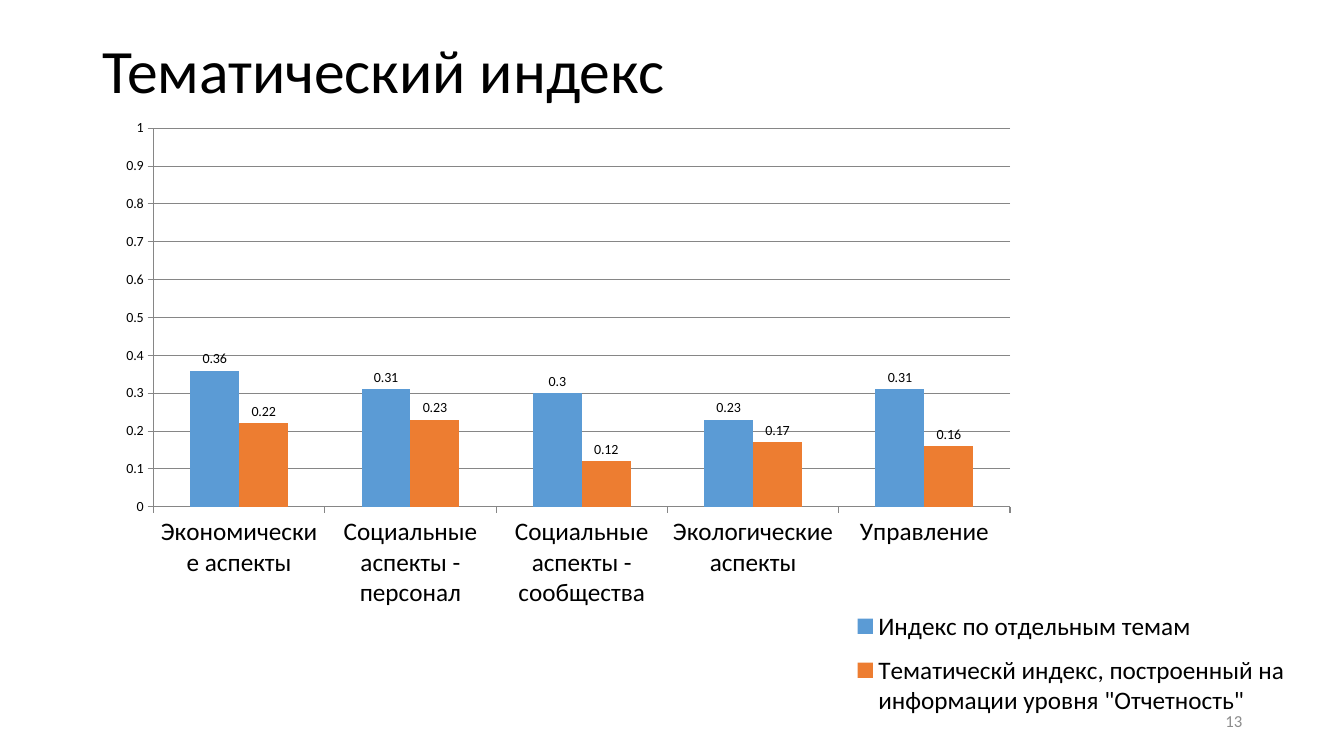
from lxml.etree import SubElement, QName
from pptx import Presentation
from pptx.chart.data import CategoryChartData
from pptx.dml.color import RGBColor
from pptx.enum.chart import XL_CHART_TYPE, XL_LABEL_POSITION, XL_LEGEND_POSITION, XL_TICK_MARK
from pptx.enum.text import MSO_ANCHOR, PP_ALIGN
from pptx.oxml import parse_xml
from pptx.oxml.ns import nsdecls, qn
from pptx.util import Inches, Pt

FONT = "Calibri"
BLACK = RGBColor(0x00, 0x00, 0x00)
GRAY = RGBColor(0x8C, 0x8C, 0x8C)
GRID = RGBColor(0x86, 0x86, 0x86)
BLUE = RGBColor(0x5B, 0x9B, 0xD5)
ORANGE = RGBColor(0xED, 0x7D, 0x31)

TOPICS = [
    "Экономические аспекты",
    "Социальные аспекты - персонал",
    "Социальные аспекты - сообщества",
    "Экологические аспекты",
    "Управление",
]
INDEXES = [
    ("Индекс по отдельным темам", BLUE, (0.36, 0.31, 0.3, 0.23, 0.31)),
    ('Тематическй индекс, построенный на информации уровня "Отчетность"',
     ORANGE, (0.22, 0.23, 0.12, 0.17, 0.16)),
]
PLOT_SHARES = (0.06, 0.026, 0.705, 0.602)
LEGEND_SHARES = (0.636, 0.772, 0.362, 0.21)


def add_text(s, box, text, size, color, align, spacing=1.0):
    tf = s.shapes.add_textbox(*map(Inches, box)).text_frame
    tf.word_wrap = True
    tf.vertical_anchor = MSO_ANCHOR.MIDDLE
    tf.text = text
    p = tf.paragraphs[0]
    p.alignment = align
    p.line_spacing = spacing
    style_font(p.runs[0].font, size, color)


def style_font(font, size, color=BLACK):
    font.name = FONT
    font.size = Pt(size)
    font.color.rgb = color


def make_layout(shares, inner=False):
    layout = parse_xml(f"<c:layout {nsdecls('c')}><c:manualLayout/></c:layout>")
    manual = layout[0]
    settings = [("layoutTarget", "inner")] if inner else []
    settings += [("xMode", "edge"), ("yMode", "edge")]
    settings += zip("xywh", shares)
    for tag, value in settings:
        SubElement(manual, QName(qn(f"c:{tag}"))).set("val", str(value))
    return layout


def clear_layout(element):
    for layout in element.findall(qn("c:layout")):
        element.remove(layout)


def style_axes(chart):
    for axis, size in ((chart.category_axis, 18), (chart.value_axis, 10)):
        axis.major_tick_mark = XL_TICK_MARK.OUTSIDE
        axis.minor_tick_mark = XL_TICK_MARK.NONE
        axis.format.line.color.rgb = GRID
        style_font(axis.tick_labels.font, size)
    values = chart.value_axis
    values.minimum_scale, values.maximum_scale, values.major_unit = 0, 1, 0.1
    values.has_major_gridlines = True
    values.major_gridlines.format.line.color.rgb = GRID


def add_legend(chart):
    chart.has_legend = True
    legend = chart.legend
    legend.position = XL_LEGEND_POSITION.RIGHT
    legend.include_in_layout = False
    style_font(legend.font, 18)
    element = chart.element.find(f".//{qn('c:legend')}")
    clear_layout(element)
    element.find(qn("c:legendPos")).addnext(make_layout(LEGEND_SHARES))


def add_index_chart(s, box):
    data = CategoryChartData(number_format="General")
    data.categories = TOPICS
    for name, _, values in INDEXES:
        data.add_series(name, values)
    chart = s.shapes.add_chart(
        XL_CHART_TYPE.COLUMN_CLUSTERED, *map(Inches, box), data).chart
    chart.has_title = False
    style_font(chart.font, 10)
    style_axes(chart)
    plot = chart.plots[0]
    plot.gap_width = 150
    plot.overlap = 0
    plot.vary_by_categories = False
    for series, (_, color, _) in zip(plot.series, INDEXES):
        series.format.fill.solid()
        series.format.fill.fore_color.rgb = color
        labels = series.data_labels
        labels.show_value = True
        labels.position = XL_LABEL_POSITION.OUTSIDE_END
        style_font(labels.font, 10)
    add_legend(chart)
    area = chart.element.find(f".//{qn('c:plotArea')}")
    clear_layout(area)
    area.insert(0, make_layout(PLOT_SHARES, inner=True))
    chart.element.find(qn("c:chart")).addnext(parse_xml(
        f"<c:spPr {nsdecls('c', 'a')}><a:noFill/><a:ln><a:noFill/></a:ln></c:spPr>"))


def build_index_slide(prs):
    s = prs.slides.add_slide(prs.slide_layouts[6])
    add_text(s, (0.92, 0, 11.5, 1.45), "Тематический индекс", 44, BLACK, PP_ALIGN.LEFT, 0.9)
    add_text(s, (9.42, 6.95, 3, 0.4), "13", 12, GRAY, PP_ALIGN.RIGHT)
    add_index_chart(s, (0.8, 1.11, 12.05, 6.24))


def main():
    prs = Presentation()
    prs.slide_width, prs.slide_height = Inches(13.33), Inches(7.5)
    build_index_slide(prs)
    prs.save("out.pptx")


if __name__ == "__main__":
    main()
